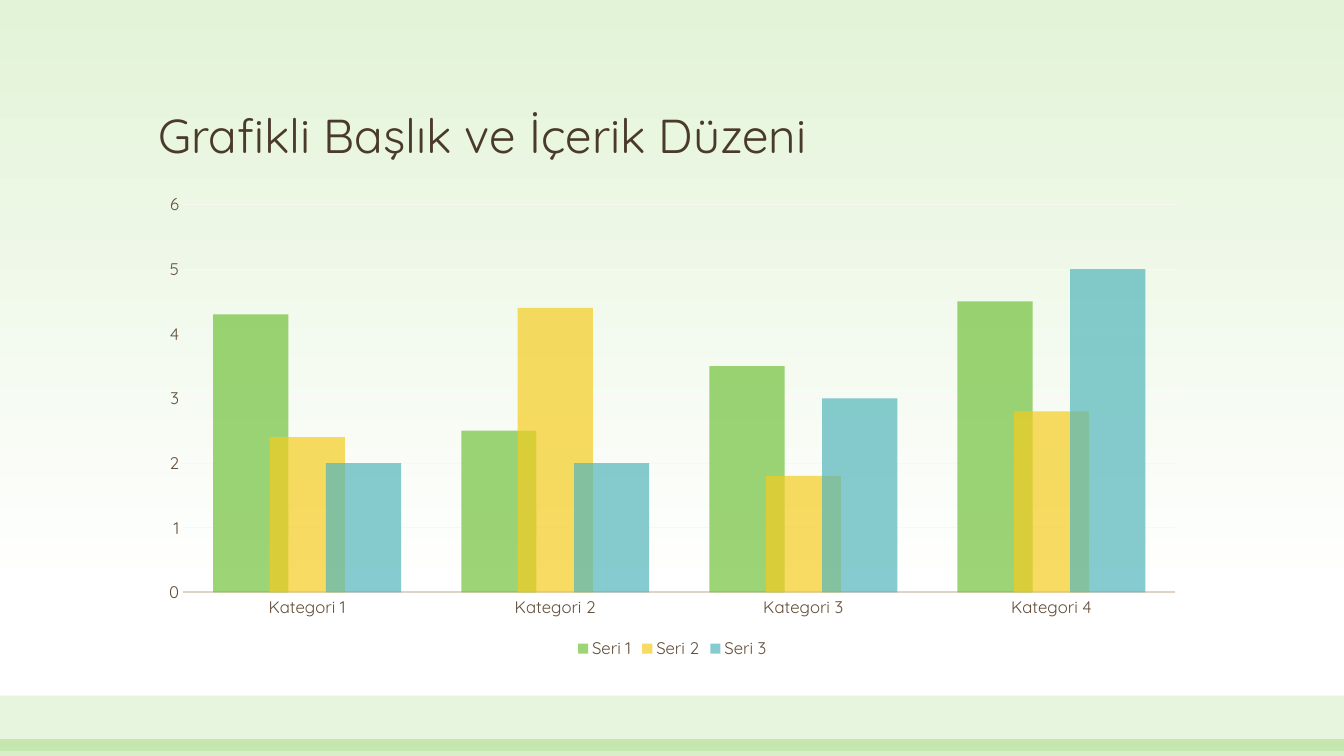
from dataclasses import dataclass

from lxml import etree
from pptx import Presentation
from pptx import util as u
from pptx.chart import data as cd
from pptx.dml.color import RGBColor
from pptx.enum import chart as ch, shapes, text
from pptx.oxml.ns import qn


@dataclass(frozen=True)
class Theme:
    font: str = "Quicksand"
    title: str = "4A3A2A"
    label: str = "624D38"
    axis: str = "DFD2C6"
    grid: str = "F9F6F4"
    sky: str = "E3F3D8"
    white: str = "FFFFFF"
    green: str = "72C23C"
    yellow: str = "F4CC20"
    teal: str = "53B6BB"
    title_size: float = 34
    label_size: float = 12


@dataclass(frozen=True)
class Band:
    top: float
    height: float
    opacity: int


@dataclass(frozen=True)
class Series:
    name: str
    values: tuple[float, ...]
    color: str


T = Theme()
WIDTH, HEIGHT = 960, 540
LEFT, CONTENT_WIDTH = 105.84, 748.8
BANDS = [Band(496.8, 39.6, 17), Band(528, 12, 28)]
CATEGORIES = [f"Kategori {n}" for n in range(1, 5)]
SERIES = [
    Series("Seri 1", (4.3, 2.5, 3.5, 4.5), T.green),
    Series("Seri 2", (2.4, 4.4, 1.8, 2.8), T.yellow),
    Series("Seri 3", (2, 2, 3, 5), T.teal),
]


def rgb(color: str) -> RGBColor:
    return RGBColor.from_string(color)


def fill_translucent(fill, color: str, opacity: int) -> None:
    """Fill with a solid colour at the given opacity in percent."""
    fill.solid()
    fill.fore_color.rgb = rgb(color)
    clr = fill._xPr.find(qn("a:solidFill"))[0]
    etree.SubElement(clr, qn("a:alpha"), val=str(opacity * 1000))


def style_font(font, size: float, color: str) -> None:
    font.name = T.font
    font.size = u.Pt(size)
    font.bold = False
    font.color.rgb = rgb(color)


def paint_background(s) -> None:
    fill = s.background.fill
    fill.gradient()
    fill.gradient_angle = 270
    for stop, color, pos in zip(fill.gradient_stops, (T.sky, T.white), (0, 0.79)):
        stop.color.rgb = rgb(color)
        stop.position = pos


def add_band(s, band: Band) -> None:
    sp = s.shapes.add_shape(shapes.MSO_SHAPE.RECTANGLE, 0, u.Pt(band.top),
                            u.Pt(WIDTH), u.Pt(band.height))
    sp.shadow.inherit = False
    sp.line.fill.background()
    fill_translucent(sp.fill, T.green, band.opacity)


def add_title(s, title: str) -> None:
    sp = s.shapes.add_textbox(u.Pt(LEFT), u.Pt(34.56), u.Pt(CONTENT_WIDTH), u.Pt(85.68))
    tf = sp.text_frame
    tf.word_wrap = True
    tf.vertical_anchor = text.MSO_ANCHOR.BOTTOM
    p = tf.paragraphs[0]
    p.line_spacing = 0.9
    r = p.add_run()
    r.text = title
    style_font(r.font, T.title_size, T.title)


def add_column_chart(s) -> None:
    data = cd.CategoryChartData()
    data.categories = CATEGORIES
    for series in SERIES:
        data.add_series(series.name, series.values)
    chart = s.shapes.add_chart(ch.XL_CHART_TYPE.COLUMN_CLUSTERED, u.Pt(LEFT), u.Pt(131.76),
                               u.Pt(CONTENT_WIDTH), u.Pt(342), data).chart
    chart.has_title = False
    style_font(chart.font, T.label_size, T.label)

    plot = chart.plots[0]
    plot.gap_width, plot.overlap = 80, 25
    plot.vary_by_categories = False
    for drawn, series in zip(plot.series, SERIES):
        drawn.invert_if_negative = False
        fill_translucent(drawn.format.fill, series.color, 70)

    for axis in (chart.category_axis, chart.value_axis):
        axis.major_tick_mark = axis.minor_tick_mark = ch.XL_TICK_MARK.NONE
        style_font(axis.tick_labels.font, T.label_size, T.label)
    line = chart.category_axis.format.line
    line.color.rgb = rgb(T.axis)
    line.width = u.Pt(1.25)

    values = chart.value_axis
    values.minimum_scale, values.maximum_scale, values.major_unit = 0, 6, 1
    values.format.line.fill.background()
    grid = values.major_gridlines.format.line
    grid.color.rgb = rgb(T.grid)
    grid.width = u.Pt(0.75)

    chart.has_legend = True
    chart.legend.position = ch.XL_LEGEND_POSITION.BOTTOM
    chart.legend.include_in_layout = False
    style_font(chart.legend.font, T.label_size, T.label)


def main() -> None:
    prs = Presentation()
    prs.slide_width, prs.slide_height = u.Pt(WIDTH), u.Pt(HEIGHT)
    s = prs.slides.add_slide(prs.slide_layouts[6])
    paint_background(s)
    for band in BANDS:
        add_band(s, band)
    add_title(s, "Grafikli Başlık ve İçerik Düzeni")
    add_column_chart(s)
    prs.save("out.pptx")


if __name__ == "__main__":
    main()
